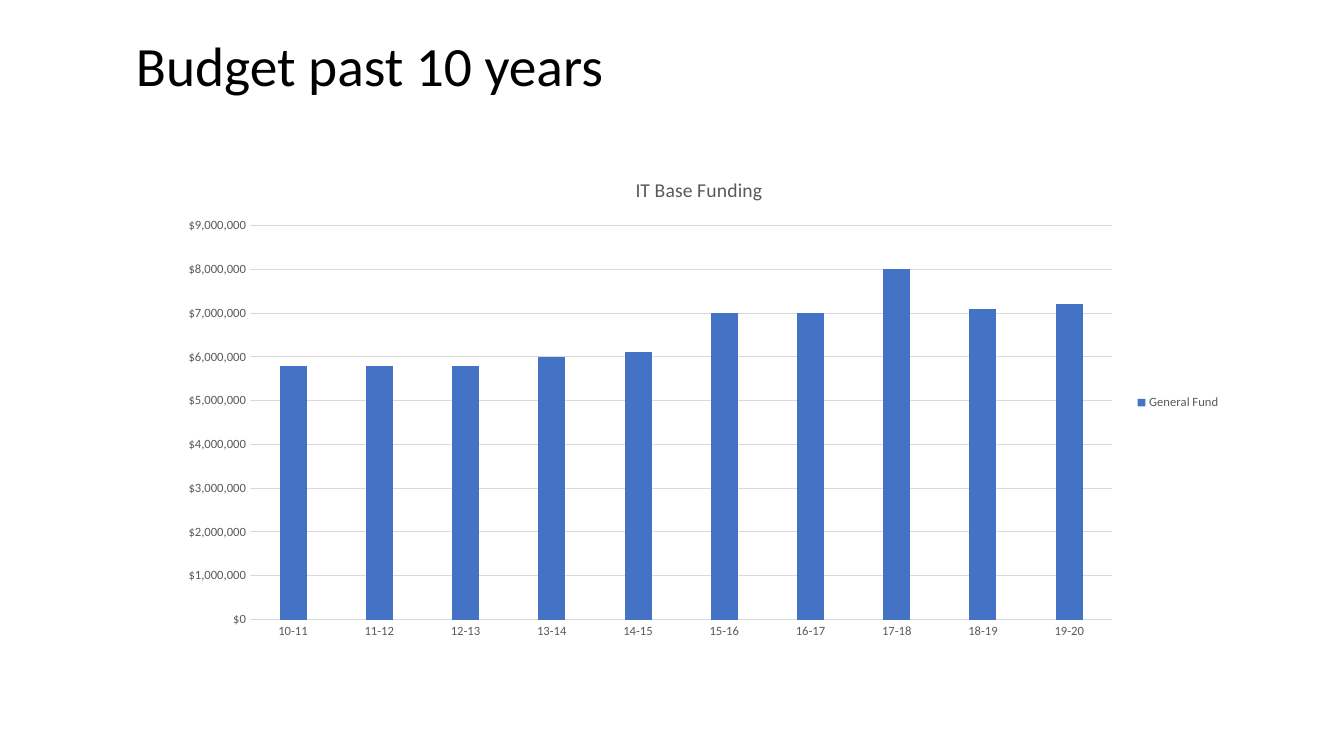
import pptx
import pptx.chart.data
import pptx.dml.color
import pptx.enum.chart
import pptx.util
from dataclasses import dataclass

Pt = pptx.util.Pt
enums = pptx.enum.chart


@dataclass(frozen=True)
class Theme:
    face: str = "Calibri"
    ink: str = "000000"
    grey: str = "595959"
    rule: str = "D9D9D9"
    bar: str = "4472C4"
    head: float = 39.6
    title: float = 14
    label: float = 9
    line: float = 0.75


THEME = Theme()
FUNDS = {
    "10-11": 5800000,
    "11-12": 5800000,
    "12-13": 5800000,
    "13-14": 6000000,
    "14-15": 6100000,
    "15-16": 7000000,
    "16-17": 7000000,
    "17-18": 8000000,
    "18-19": 7100000,
    "19-20": 7200000,
}


def color(code):
    return pptx.dml.color.RGBColor.from_string(code)


def style(font, size, code):
    font.name = THEME.face
    font.size = Pt(size)
    font.bold = False
    font.color.rgb = color(code)


def stroke(line):
    line.color.rgb = color(THEME.rule)
    line.width = Pt(THEME.line)


def add_head(slide, text, left, top, width, height):
    box = slide.shapes.add_textbox(Pt(left), Pt(top), Pt(width), Pt(height))
    frame = box.text_frame
    frame.word_wrap = True
    frame.text = text
    para = frame.paragraphs[0]
    para.line_spacing = 0.9
    style(para.runs[0].font, THEME.head, THEME.ink)


def set_axis(axis):
    axis.major_tick_mark = enums.XL_TICK_MARK.NONE
    axis.minor_tick_mark = enums.XL_TICK_MARK.NONE
    style(axis.tick_labels.font, THEME.label, THEME.grey)


def add_bars(slide, title, name, funds, left, top, width, height):
    data = pptx.chart.data.CategoryChartData()
    data.categories = list(funds)
    data.add_series(name, list(funds.values()))
    chart = slide.shapes.add_chart(
        enums.XL_CHART_TYPE.COLUMN_CLUSTERED,
        Pt(left), Pt(top), Pt(width), Pt(height), data,
    ).chart
    style(chart.font, THEME.label, THEME.grey)

    chart.has_title = True
    frame = chart.chart_title.text_frame
    frame.text = title
    style(frame.paragraphs[0].runs[0].font, THEME.title, THEME.grey)
    chart.chart_title.include_in_layout = False

    chart.has_legend = True
    chart.legend.position = enums.XL_LEGEND_POSITION.RIGHT
    chart.legend.include_in_layout = False
    style(chart.legend.font, THEME.label, THEME.grey)

    set_axis(chart.category_axis)
    stroke(chart.category_axis.format.line)

    scale = chart.value_axis
    set_axis(scale)
    scale.minimum_scale = 0
    scale.maximum_scale = 9000000
    scale.major_unit = 1000000
    scale.format.line.fill.background()
    stroke(scale.major_gridlines.format.line)
    scale.tick_labels.number_format = '"$"#,##0'
    scale.tick_labels.number_format_is_linked = False

    plot = chart.plots[0]
    plot.gap_width = 219
    plot.overlap = -27
    plot.vary_by_categories = False
    fill = plot.series[0].format.fill
    fill.solid()
    fill.fore_color.rgb = color(THEME.bar)


def main():
    deck = pptx.Presentation()
    deck.slide_width = Pt(960)
    deck.slide_height = Pt(540)
    slide = deck.slides.add_slide(deck.slide_layouts[6])
    add_head(slide, "Budget past 10 years", 90, 24, 780, 52)
    add_bars(slide, "IT Base Funding", "General Fund", FUNDS,
             119.5, 112.3, 759.6, 350.6)
    deck.save("out.pptx")


if __name__ == "__main__":
    main()
